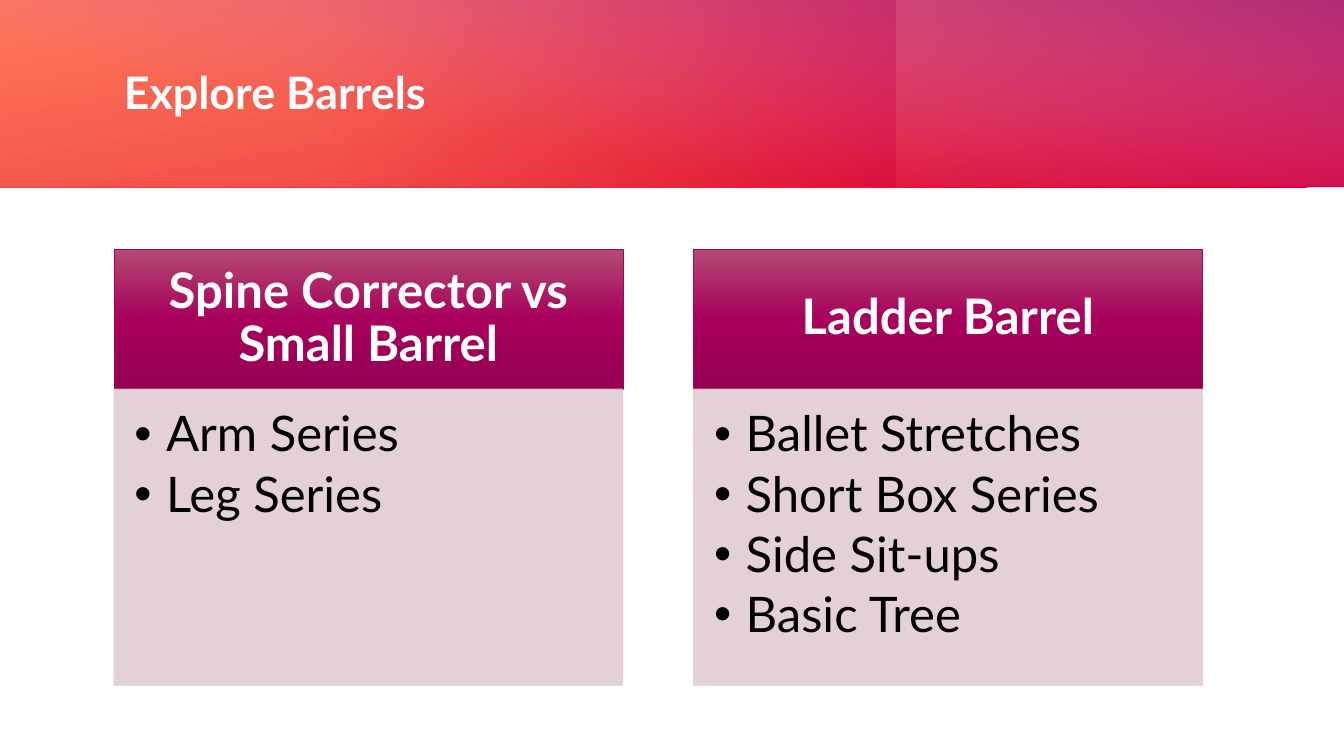
from dataclasses import dataclass

from lxml.etree import SubElement
from pptx import Presentation
from pptx.dml.color import RGBColor
from pptx.enum.shapes import MSO_SHAPE
from pptx.enum.text import MSO_ANCHOR, PP_ALIGN
from pptx.oxml.ns import qn
from pptx.shapes.autoshape import Shape
from pptx.slide import Slide
from pptx.text.text import TextFrame
from pptx.util import Pt

FONT = "Lato"
WHITE = RGBColor(0xFF, 0xFF, 0xFF)
BLACK = RGBColor(0x00, 0x00, 0x00)
CRIMSON = RGBColor(0xDA, 0x00, 0x2F)
PEACH = RGBColor(0xFF, 0x84, 0x63)
CORAL = RGBColor(0xFF, 0x6C, 0x4F)
ORCHID = RGBColor(0xD8, 0x61, 0xD4)
PURPLE = RGBColor(0x93, 0x25, 0x8E)
ROSE = RGBColor(0xB2, 0x4B, 0x71)
MAGENTA = RGBColor(0xA8, 0x00, 0x5C)
DARK_MAGENTA = RGBColor(0x95, 0x00, 0x52)
HEADER_LINE = RGBColor(0xA6, 0x02, 0x5C)
BLUSH = RGBColor(0xE1, 0xCC, 0xD2)

CARD_LEFT, CARD_PITCH, CARD_WIDTH = 81.36, 414, 363.6
HEADER_TOP, HEADER_HEIGHT = 177.84, 100.08
BODY_HEIGHT = 211.68
CARD_SIZE = 35
BULLET_INDENT = 22.5


@dataclass(frozen=True)
class Box:
    left: float
    top: float
    width: float
    height: float

    def emu(self) -> tuple[Pt, Pt, Pt, Pt]:
        return Pt(self.left), Pt(self.top), Pt(self.width), Pt(self.height)


@dataclass(frozen=True)
class Stop:
    position: int
    color: RGBColor
    alpha: int = 100


@dataclass(frozen=True)
class Band:
    box: Box
    angle: int
    stops: tuple[Stop, ...]


@dataclass(frozen=True)
class Card:
    heading: str
    items: tuple[str, ...]


BANDS = (
    Band(Box(-0.72, 0, 961.2, 133.92), 260, (Stop(0, CRIMSON), Stop(100, PEACH))),
    Band(Box(-0.72, 0, 640.08, 133.2), 0, (Stop(37, CORAL, 42), Stop(99, CRIMSON, 50))),
    Band(Box(0.72, -0.72, 960.48, 133.2), 280, (Stop(32, ORCHID, 0), Stop(100, PURPLE, 66))),
)
HEADER_STOPS = (Stop(0, ROSE), Stop(50, MAGENTA), Stop(100, DARK_MAGENTA))
CARDS = (
    Card("Spine Corrector vs Small Barrel", ("Arm Series", "Leg Series")),
    Card("Ladder Barrel", ("Ballet Stretches", "Short Box Series", "Side Sit-ups", "Basic Tree")),
)


def add_rect(s: Slide, box: Box) -> Shape:
    sp = s.shapes.add_shape(MSO_SHAPE.RECTANGLE, *box.emu())
    sp.shadow.inherit = False
    sp.line.fill.background()
    return sp


def set_gradient(sp: Shape, angle: int, stops: tuple[Stop, ...]) -> None:
    sp.fill.gradient()
    grad = sp._element.spPr.find(qn("a:gradFill"))
    for child in list(grad):
        grad.remove(child)
    gs_list = SubElement(grad, qn("a:gsLst"))
    for stop in stops:
        gs = SubElement(gs_list, qn("a:gs"), pos=str(stop.position * 1000))
        clr = SubElement(gs, qn("a:srgbClr"), val=str(stop.color))
        if stop.alpha < 100:
            SubElement(clr, qn("a:alpha"), val=str(stop.alpha * 1000))
    SubElement(grad, qn("a:lin"), ang=str(angle * 60000), scaled="0")


def set_outline(sp: Shape, color: RGBColor) -> None:
    sp.line.color.rgb = color
    sp.line.width = Pt(0.5)


def set_text(
    tf: TextFrame, lines: tuple[str, ...], size: float, color: RGBColor,
    bold: bool, align: PP_ALIGN, anchor: MSO_ANCHOR,
    insets: tuple[float, float, float, float], bulleted: bool = False,
) -> None:
    tf.word_wrap = True
    tf.vertical_anchor = anchor
    tf.margin_left, tf.margin_top, tf.margin_right, tf.margin_bottom = map(Pt, insets)
    tf.text = "\n".join(lines)
    for p in tf.paragraphs:
        if bulleted:
            pPr = p._p.get_or_add_pPr()
            pPr.set("marL", str(Pt(BULLET_INDENT)))
            pPr.set("indent", str(-Pt(BULLET_INDENT)))
            SubElement(pPr, qn("a:buFont"), typeface="Arial")
            SubElement(pPr, qn("a:buChar"), char="•")
            p.space_after = Pt(size * 0.15)
        p.alignment = align
        p.line_spacing = 0.9
        for r in p.runs:
            r.font.name = FONT
            r.font.size = Pt(size)
            r.font.bold = bold
            r.font.color.rgb = color


def add_card(s: Slide, card: Card, left: float) -> None:
    header = add_rect(s, Box(left, HEADER_TOP, CARD_WIDTH, HEADER_HEIGHT))
    set_gradient(header, 90, HEADER_STOPS)
    set_outline(header, HEADER_LINE)
    set_text(header.text_frame, (card.heading,), CARD_SIZE, WHITE, True,
             PP_ALIGN.CENTER, MSO_ANCHOR.MIDDLE, (19.6, 11.2, 19.6, 11.2))

    body = add_rect(s, Box(left, HEADER_TOP + HEADER_HEIGHT, CARD_WIDTH, BODY_HEIGHT))
    body.fill.solid()
    body.fill.fore_color.rgb = BLUSH
    set_outline(body, BLUSH)
    for clr in body._element.spPr.iter(qn("a:srgbClr")):
        SubElement(clr, qn("a:alpha"), val="90000")
    set_text(body.text_frame, card.items, CARD_SIZE, BLACK, False,
             PP_ALIGN.LEFT, MSO_ANCHOR.TOP, (14.7, 14.7, 19.6, 22.1), True)


def main() -> None:
    prs = Presentation()
    prs.slide_width, prs.slide_height = Pt(960), Pt(540)
    s = prs.slides.add_slide(prs.slide_layouts[6])
    for band in BANDS:
        set_gradient(add_rect(s, band.box), band.angle, band.stops)
    title = s.shapes.add_textbox(*Box(CARD_LEFT, 27.36, 777.6, 81.36).emu())
    set_text(title.text_frame, ("Explore Barrels",), 32, WHITE, True,
             PP_ALIGN.LEFT, MSO_ANCHOR.MIDDLE, (7.2, 3.6, 7.2, 3.6))
    for i, card in enumerate(CARDS):
        add_card(s, card, CARD_LEFT + i * CARD_PITCH)
    prs.save("out.pptx")


if __name__ == "__main__":
    main()
